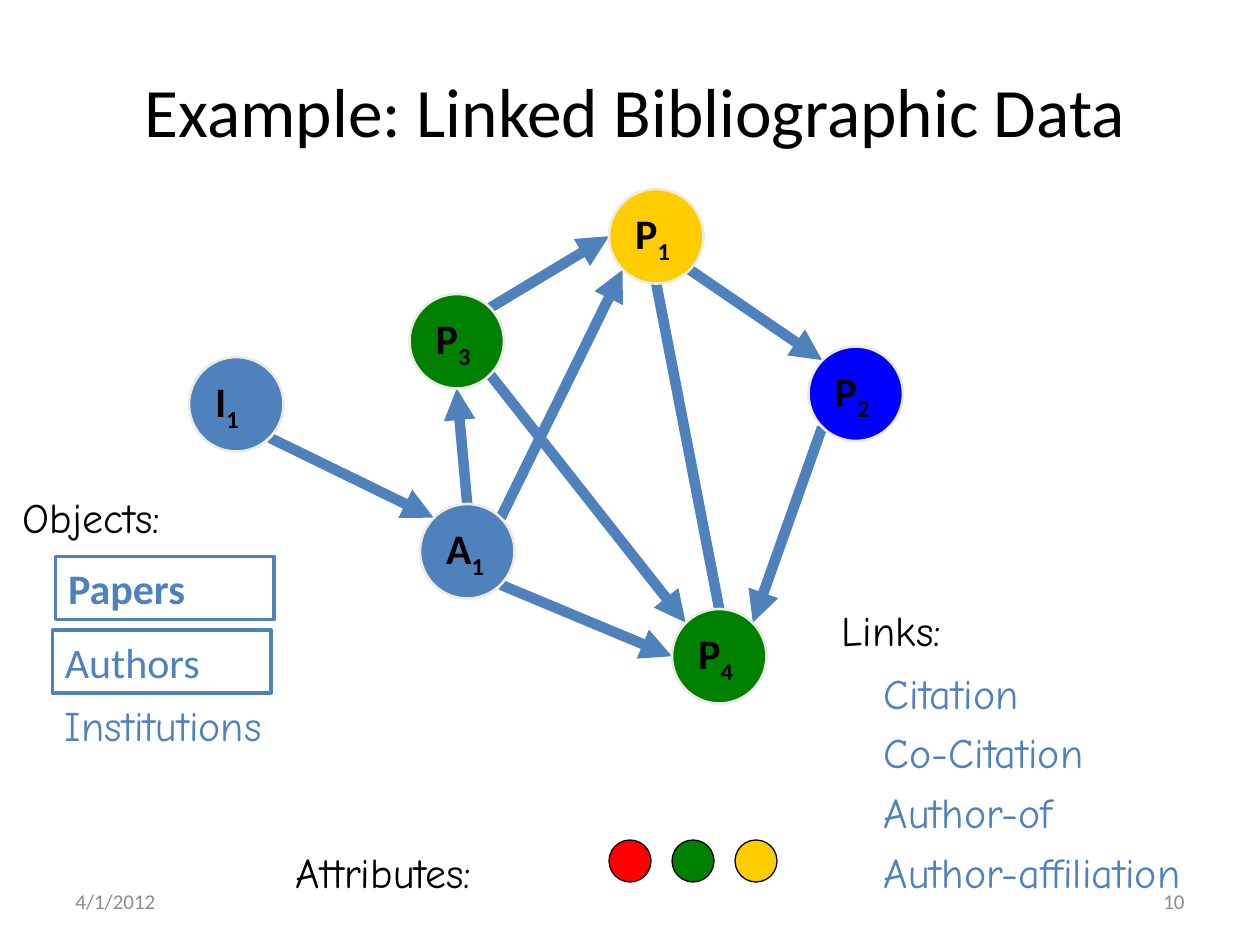
from math import cos, radians, sin

from lxml import etree
from pptx import Presentation
from pptx.dml.color import RGBColor
from pptx.enum.shapes import MSO_CONNECTOR, MSO_SHAPE
from pptx.enum.text import MSO_ANCHOR, MSO_AUTO_SIZE, PP_ALIGN
from pptx.oxml.ns import qn
from pptx.util import Emu, Pt

PX = 7620
SANS, HAND = "Calibri", "Comic Neue"
BLACK = RGBColor(0x00, 0x00, 0x00)
WHITE = RGBColor(0xFF, 0xFF, 0xFF)
GREY = RGBColor(0x8C, 0x8C, 0x8C)
IVORY = RGBColor(0xEE, 0xEC, 0xE1)
STEEL = RGBColor(0x4F, 0x81, 0xBD)
RED = RGBColor(0xFF, 0x00, 0x00)
GREEN = RGBColor(0x00, 0x80, 0x00)
GOLD = RGBColor(0xFF, 0xCC, 0x00)
BLUE = RGBColor(0x00, 0x00, 0xFF)

OVAL, RECTANGLE = MSO_SHAPE.OVAL, MSO_SHAPE.RECTANGLE
STRAIGHT = MSO_CONNECTOR.STRAIGHT
LEFT, CENTER, RIGHT = PP_ALIGN.LEFT, PP_ALIGN.CENTER, PP_ALIGN.RIGHT
TOP, MIDDLE = MSO_ANCHOR.TOP, MSO_ANCHOR.MIDDLE
FIT, NO_FIT = MSO_AUTO_SIZE.SHAPE_TO_FIT_TEXT, MSO_AUTO_SIZE.NONE

NODE_SIZE = 90
NODES = {
    "A1": (400, 480, STEEL),
    "I1": (180, 340, STEEL),
    "P2": (770, 330, BLUE),
    "P4": (640, 580, GREEN),
    "P3": (390, 280, GREEN),
    "P1": (580, 180, GOLD),
}
ANGLES = {"right": 0, "lower right": 45, "bottom": 90, "lower left": 135,
          "left": 180, "upper left": 225, "top": 270, "upper right": 315}
LINKS = [
    ("P3", "lower right", "P4", "upper left", True),
    ("P2", "lower left", "P4", "upper right", True),
    ("P3", "upper right", "P1", "left", True),
    ("P1", "lower right", "P2", "upper left", True),
    ("P4", "top", "P1", "bottom", False),
    ("A1", "top", "P3", "bottom", True),
    ("A1", "lower right", "P4", "left", True),
    ("A1", "upper right", "P1", "lower left", True),
    ("I1", "lower right", "A1", "upper left", True),
]
LINK_TYPES = ["Citation", "Co-Citation", "Author-of", "Author-affiliation"]
LINK_WIDTHS = [208, 300, 280, 400]


def px(*lengths):
    return [Emu(length * PX) for length in lengths]


def write(shape, text, subscript="", font=SANS, size=24, color=BLACK, bold=False,
          align=LEFT, anchor=TOP, wrap=True, fit=NO_FIT):
    frame = shape.text_frame
    frame.word_wrap = wrap
    frame.auto_size = fit
    frame.vertical_anchor = anchor
    para = frame.paragraphs[0]
    para.alignment = align
    for part in filter(None, (text, subscript)):
        span = para.add_run()
        span.text = part
        span.font.name = font
        span.font.size = Pt(size)
        span.font.bold = bold
        span.font.color.rgb = color
    if subscript:
        span.font._element.set("baseline", "-25000")


def node_point(name, side):
    left, top, _ = NODES[name]
    radius = NODE_SIZE / 2
    angle = radians(ANGLES[side])
    return (round(left + radius + radius * cos(angle)),
            round(top + radius + radius * sin(angle)))


class SlideBuilder:
    def __init__(self, deck):
        self.page = deck.slides.add_slide(deck.slide_layouts[5])
        self.link_color = STEEL
        self.link_weight = Pt(6)

    def title(self, text, left, top, width, height):
        title = self.page.shapes.title
        title.left, title.top, title.width, title.height = px(left, top, width, height)
        write(title, text, size=39.6, align=CENTER, anchor=MIDDLE)

    def label(self, text, left, top, width, height=60, **style):
        box = self.page.shapes.add_textbox(*px(left, top, width, height))
        write(box, text, **{"font": HAND, "fit": FIT, **style})

    def shape(self, kind, left, top, width, height, fill, line, weight):
        shape = self.page.shapes.add_shape(kind, *px(left, top, width, height))
        shape.shadow.inherit = False
        shape.fill.solid()
        shape.fill.fore_color.rgb = fill
        shape.line.color.rgb = line
        shape.line.width = Pt(weight)
        return shape

    def tag(self, text, left, top, bold=False):
        tag = self.shape(RECTANGLE, left, top, 208, 60, WHITE, STEEL, 2)
        write(tag, text, color=STEEL, bold=bold, fit=FIT)

    def node(self, name):
        left, top, fill = NODES[name]
        node = self.shape(OVAL, left, top, NODE_SIZE, NODE_SIZE, fill, IVORY, 1.5)
        write(node, name[0], subscript=name[1], bold=True, anchor=MIDDLE, wrap=False)

    def link(self, start, end, arrow):
        link = self.page.shapes.add_connector(STRAIGHT, *px(*start, *end))
        link.line.color.rgb = self.link_color
        link.line.width = self.link_weight
        if arrow:
            etree.SubElement(link.line._get_or_add_ln(), qn("a:tailEnd"), type="triangle")
        etree.SubElement(link._element.spPr, qn("a:effectLst"))


def main():
    deck = Presentation()
    deck.slide_width, deck.slide_height = px(1200, 900)
    builder = SlideBuilder(deck)

    builder.title("Example: Linked Bibliographic Data", 20, 60, 1170, 90)
    footer = {"font": SANS, "size": 12, "color": GREY, "anchor": MIDDLE, "fit": NO_FIT}
    builder.label("4/1/2012", 60, 834, 280, 48, **footer)
    builder.label("10", 860, 834, 280, 48, align=RIGHT, **footer)

    builder.label("Objects:", 10, 462, 320)
    builder.tag("Papers", 53, 530, bold=True)
    builder.tag("Authors", 50, 600)
    builder.label("Institutions", 50, 660, 280, color=STEEL)

    builder.label("Links:", 790, 570, 320)
    for row, (text, width) in enumerate(zip(LINK_TYPES, LINK_WIDTHS)):
        builder.label(text, 830, 630 + row * 170 // 3, width, color=STEEL)

    for source, source_side, target, target_side, arrow in LINKS:
        builder.link(node_point(source, source_side), node_point(target, target_side), arrow)
    for name in NODES:
        builder.node(name)

    builder.label("Attributes:", 270, 800, 320)
    for column, color in enumerate((RED, GREEN, GOLD)):
        builder.shape(OVAL, 580 + 60 * column, 800, 40, 40, color, BLACK, 0.75)

    deck.save("out.pptx")


if __name__ == "__main__":
    main()
